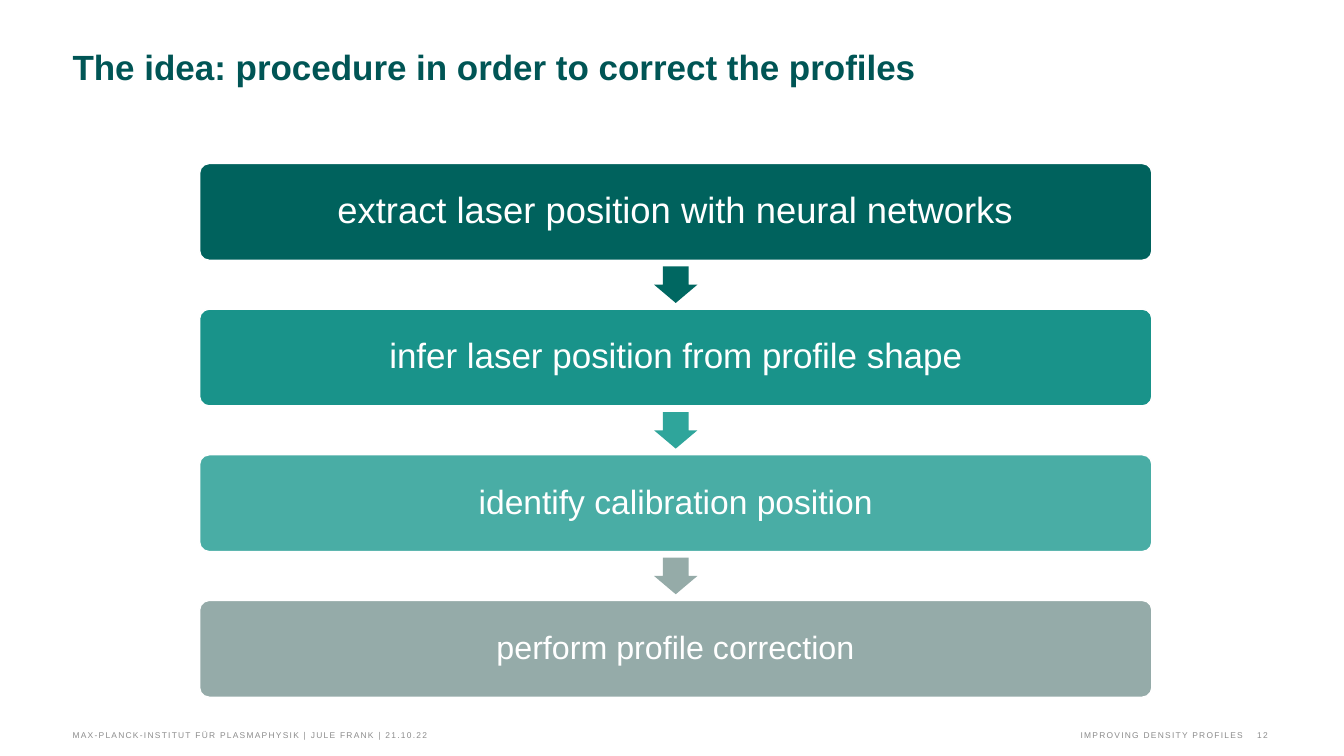
from pptx import Presentation
from pptx.dml.color import RGBColor
from pptx.enum.shapes import MSO_SHAPE
from pptx.enum.text import MSO_ANCHOR, PP_ALIGN
from pptx.util import Cm, Pt

ROUNDED = MSO_SHAPE.ROUNDED_RECTANGLE
DOWN_ARROW = MSO_SHAPE.DOWN_ARROW
LEFT, CENTER, RIGHT = PP_ALIGN.LEFT, PP_ALIGN.CENTER, PP_ALIGN.RIGHT
TOP, MIDDLE, BOTTOM = MSO_ANCHOR.TOP, MSO_ANCHOR.MIDDLE, MSO_ANCHOR.BOTTOM

COLORS = {
    "title": "005555",
    "footer": "8C8C8C",
    "white": "FFFFFF",
    "extract": "00625D",
    "infer": "19938A",
    "identify": "49ADA5",
    "perform": "95ABA9",
    "extract_arrow": "006761",
    "infer_arrow": "2FA59B",
    "identify_arrow": "95ABA8",
}

STEPS = [
    ("extract", "extract laser position with neural networks", 26),
    ("infer", "infer laser position from profile shape", 25),
    ("identify", "identify calibration position", 24),
    ("perform", "perform profile correction", 23),
]
STEP_LEFT, STEP_TOP, STEP_WIDTH, STEP_HEIGHT = 5.03, 4.12, 24, 2.44
STEP_PITCH = 3.67
ARROW_WIDTH, ARROW_HEIGHT = 1.09, 0.92

FOOTERS = [
    (1.83, 17, LEFT, "MAX-PLANCK-INSTITUT FÜR PLASMAPHYSIK | JULE FRANK | 21.10.22"),
    (11.25, 20.07, RIGHT, "IMPROVING DENSITY PROFILES"),
    (31.34, 0.61, RIGHT, "12"),
]


def color(name):
    return RGBColor.from_string(COLORS[name])


def apply_format(target, values):
    for name, value in values.items():
        setattr(target, name, value)


def write_text(shape, text, anchor, paragraph_format, font_format, color_name):
    frame = shape.text_frame
    apply_format(frame, {
        "word_wrap": True, "vertical_anchor": anchor,
        "margin_left": 0, "margin_right": 0, "margin_top": 0, "margin_bottom": 0,
    })
    paragraph = frame.paragraphs[0]
    apply_format(paragraph, paragraph_format)
    run = paragraph.add_run()
    run.text = text
    apply_format(run.font, {"name": "Arial", **font_format})
    run.font.color.rgb = color(color_name)
    return run


def add_filled_shape(slide, kind, left, top, width, height, fill, adjustments):
    shape = slide.shapes.add_shape(kind, Cm(left), Cm(top), Cm(width), Cm(height))
    shape.shadow.inherit = False
    shape.fill.solid()
    shape.fill.fore_color.rgb = color(fill)
    shape.line.fill.background()
    for index, value in enumerate(adjustments):
        shape.adjustments[index] = value
    return shape


def add_title(slide, text):
    box = slide.shapes.add_textbox(Cm(1.83), Cm(1.22), Cm(26.7), Cm(2.18))
    write_text(box, text, TOP, {"alignment": LEFT, "line_spacing": Pt(28)},
               {"size": Pt(25), "bold": True}, "title")


def add_footer(slide, left, width, alignment, text):
    box = slide.shapes.add_textbox(Cm(left), Cm(18.24), Cm(width), Cm(0.41))
    run = write_text(box, text, BOTTOM, {"alignment": alignment}, {"size": Pt(6)}, "footer")
    run._r.get_or_add_rPr().set("spc", "90")


def add_step(slide, top, name, text, size):
    box = add_filled_shape(slide, ROUNDED, STEP_LEFT, top, STEP_WIDTH, STEP_HEIGHT, name, [0.1])
    box.line.color.rgb = color("white")
    box.line.width = Pt(1)
    write_text(box, text, MIDDLE, {"alignment": CENTER, "line_spacing": 0.9},
               {"size": Pt(size)}, "white")


def add_step_arrow(slide, step_top, name):
    left = STEP_LEFT + (STEP_WIDTH - ARROW_WIDTH) / 2
    top = step_top + (STEP_HEIGHT + STEP_PITCH - ARROW_HEIGHT) / 2
    add_filled_shape(slide, DOWN_ARROW, left, top, ARROW_WIDTH, ARROW_HEIGHT,
                     f"{name}_arrow", [0.6, 0.5])


def main():
    presentation = Presentation()
    presentation.slide_width = Cm(33.87)
    presentation.slide_height = Cm(19.05)
    slide = presentation.slides.add_slide(presentation.slide_layouts[6])

    add_title(slide, "The idea: procedure in order to correct the profiles")
    for index, (name, text, size) in enumerate(STEPS):
        top = STEP_TOP + index * STEP_PITCH
        add_step(slide, top, name, text, size)
        if index < len(STEPS) - 1:
            add_step_arrow(slide, top, name)
    for footer in FOOTERS:
        add_footer(slide, *footer)

    presentation.save("out.pptx")


if __name__ == "__main__":
    main()
